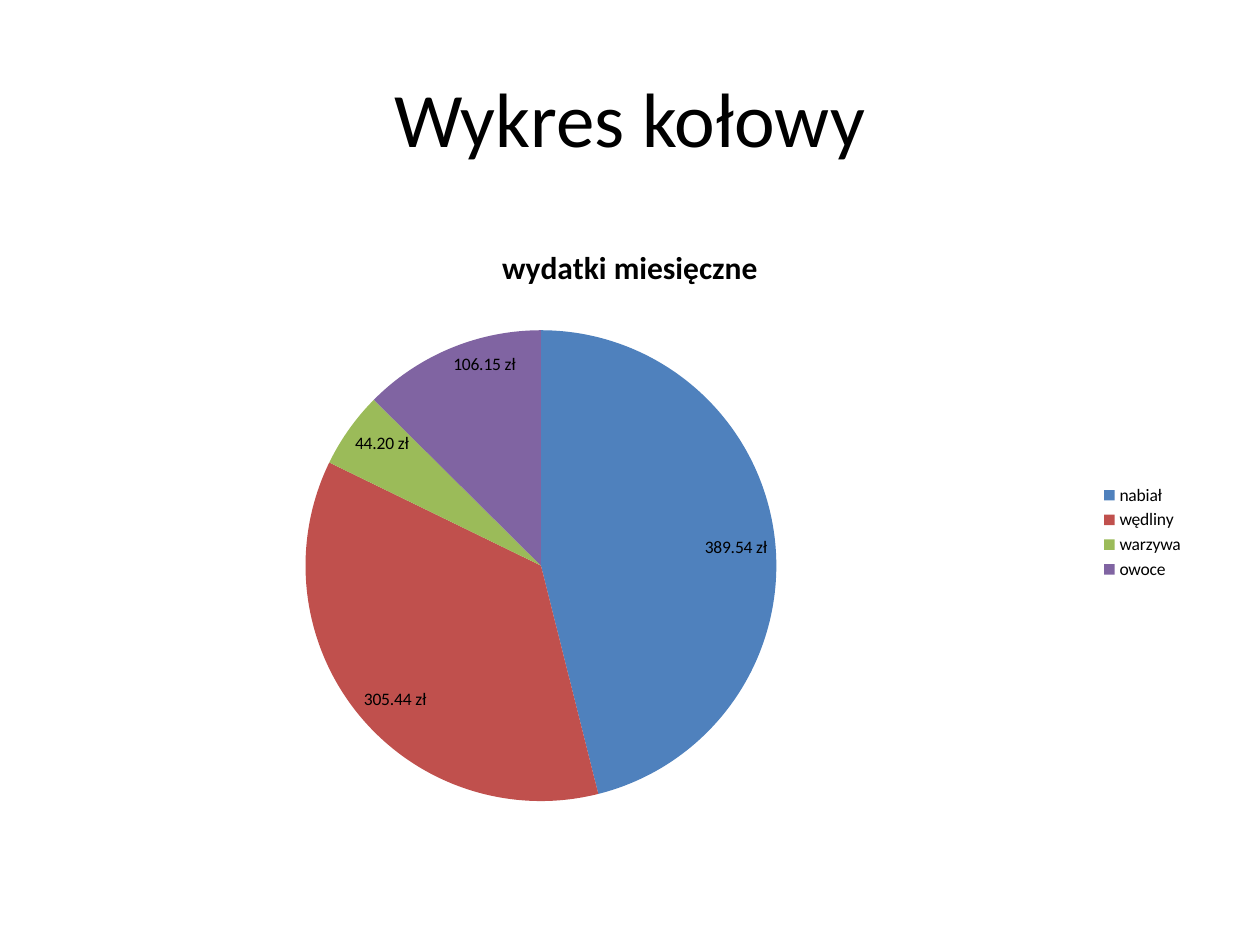
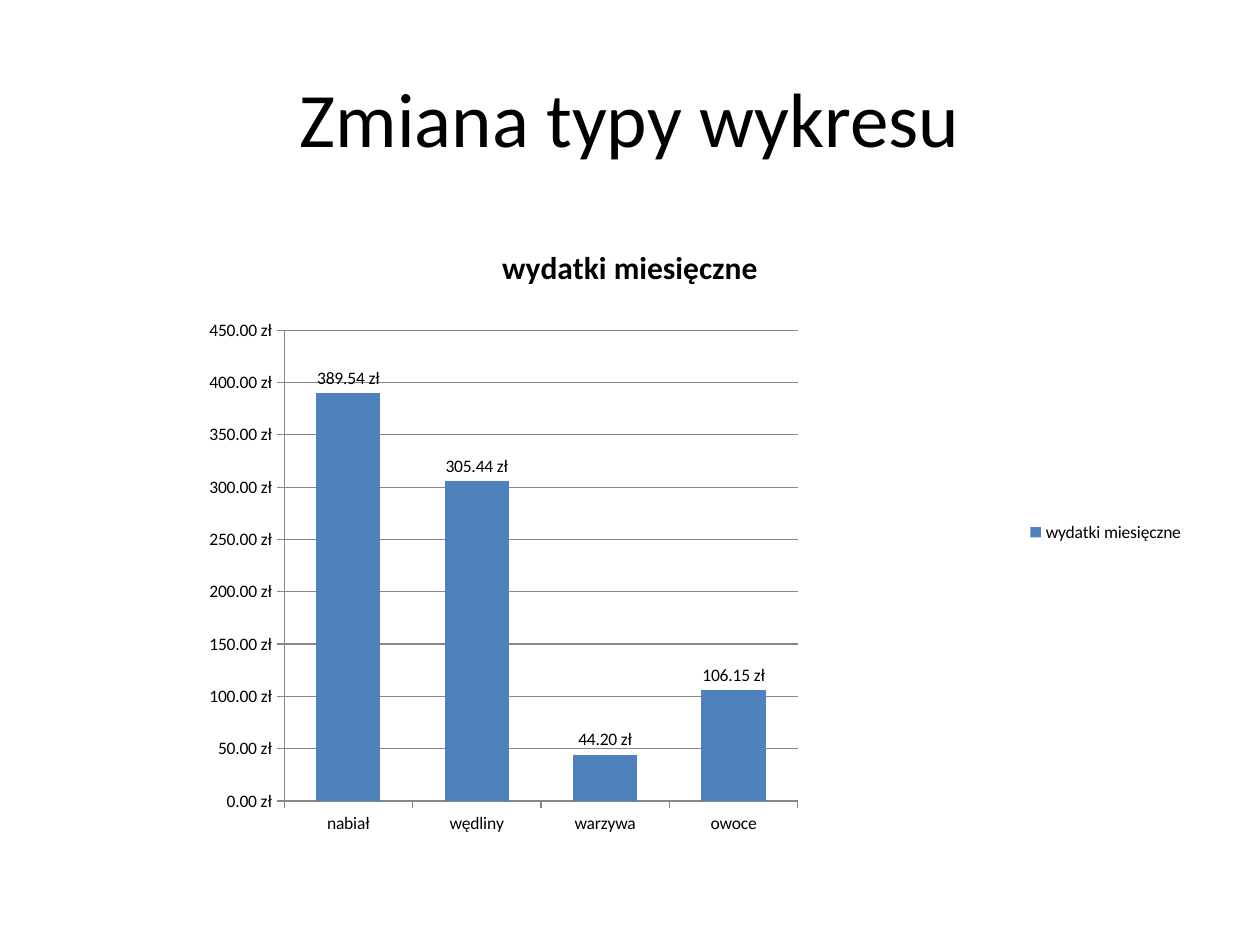
from lxml.etree import SubElement
from pptx import Presentation
from pptx.chart.data import CategoryChartData
from pptx.dml.color import RGBColor
from pptx.enum.chart import XL_CHART_TYPE, XL_LABEL_POSITION, XL_LEGEND_POSITION, XL_TICK_MARK
from pptx.enum.text import MSO_ANCHOR, PP_ALIGN
from pptx.oxml.ns import qn
from pptx.util import Inches, Pt

FONT = "Calibri"
BLACK = "000000"
AXIS_GREY = "878787"
SLICE_COLORS = ["4F81BD", "C0504D", "9BBB59", "8064A2"]
CURRENCY = '#,##0.00\\ "zł"'
PLOT_SHARES = {"x": 0.195, "y": 0.176, "w": 0.453, "h": 0.755}
MARGIN = 0.5
CONTENT_WIDTH = 10 - 2 * MARGIN

EXPENSES = {"nabiał": 389.54, "wędliny": 305.44, "warzywa": 44.20, "owoce": 106.15}
SERIES_NAME = "wydatki miesięczne"

SLIDES = [
    ("Wykres kołowy", XL_CHART_TYPE.PIE, XL_LABEL_POSITION.INSIDE_END),
    ("Zmiana typy wykresu", XL_CHART_TYPE.COLUMN_CLUSTERED, XL_LABEL_POSITION.OUTSIDE_END),
]


def style_font(font, size, color=BLACK, bold=False):
    font.name = FONT
    font.size = Pt(size)
    font.bold = bold
    font.color.rgb = RGBColor.from_string(color)


def place_plot(chart):
    """Fix the inner plot area at its shares of the chart's size."""
    plot_area = chart.element.find(".//" + qn("c:plotArea"))
    for old_layout in plot_area.findall(qn("c:layout")):
        plot_area.remove(old_layout)
    layout = SubElement(plot_area, qn("c:layout"))
    plot_area.insert(0, layout)
    manual = SubElement(layout, qn("c:manualLayout"))
    settings = {"layoutTarget": "inner", "xMode": "edge", "yMode": "edge", **PLOT_SHARES}
    for name, value in settings.items():
        SubElement(manual, qn("c:" + name)).set("val", str(value))


presentation = Presentation()
presentation.slide_width = Inches(10)
presentation.slide_height = Inches(7.5)

for title_text, chart_type, label_position in SLIDES:
    slide = presentation.slides.add_slide(presentation.slide_layouts[5])

    title = slide.shapes.title
    title.left, title.top = Inches(MARGIN), Inches(0.3)
    title.width, title.height = Inches(CONTENT_WIDTH), Inches(1.25)
    title.text_frame.text = title_text
    title.text_frame.vertical_anchor = MSO_ANCHOR.MIDDLE
    paragraph = title.text_frame.paragraphs[0]
    paragraph.alignment = PP_ALIGN.CENTER
    style_font(paragraph.font, 44)

    chart_data = CategoryChartData(number_format=CURRENCY)
    chart_data.categories = list(EXPENSES)
    chart_data.add_series(SERIES_NAME, list(EXPENSES.values()))
    chart = slide.shapes.add_chart(
        chart_type, Inches(MARGIN), Inches(1.75), Inches(CONTENT_WIDTH), Inches(4.95), chart_data
    ).chart
    style_font(chart.font, 10)
    place_plot(chart)

    chart.has_title = True
    chart.chart_title.include_in_layout = False
    chart.chart_title.text_frame.text = SERIES_NAME
    style_font(chart.chart_title.text_frame.paragraphs[0].font, 18, bold=True)

    chart.has_legend = True
    chart.legend.position = XL_LEGEND_POSITION.RIGHT
    chart.legend.include_in_layout = False

    plot = chart.plots[0]
    plot.has_data_labels = True
    labels = plot.data_labels
    labels.show_value = True
    labels.show_percentage = False
    labels.number_format = CURRENCY
    labels.number_format_is_linked = False
    labels.position = label_position
    style_font(labels.font, 10)

    series = plot.series[0]
    if chart_type == XL_CHART_TYPE.PIE:
        plot.vary_by_categories = True
        fills = [(series.points[i].format.fill, color) for i, color in enumerate(SLICE_COLORS)]
    else:
        plot.vary_by_categories = False
        plot.gap_width = 100
        fills = [(series.format.fill, SLICE_COLORS[0])]
        value_axis = chart.value_axis
        value_axis.minimum_scale, value_axis.maximum_scale = 0, 450
        value_axis.major_unit = 50
        value_axis.has_major_gridlines = True
        value_axis.tick_labels.number_format = CURRENCY
        value_axis.tick_labels.number_format_is_linked = False
        for axis in (chart.category_axis, value_axis):
            axis.major_tick_mark = XL_TICK_MARK.OUTSIDE
        for lines in (chart.category_axis, value_axis, value_axis.major_gridlines):
            lines.format.line.color.rgb = RGBColor.from_string(AXIS_GREY)
            lines.format.line.width = Pt(0.75)
    for fill, color in fills:
        fill.solid()
        fill.fore_color.rgb = RGBColor.from_string(color)

presentation.save("out.pptx")
